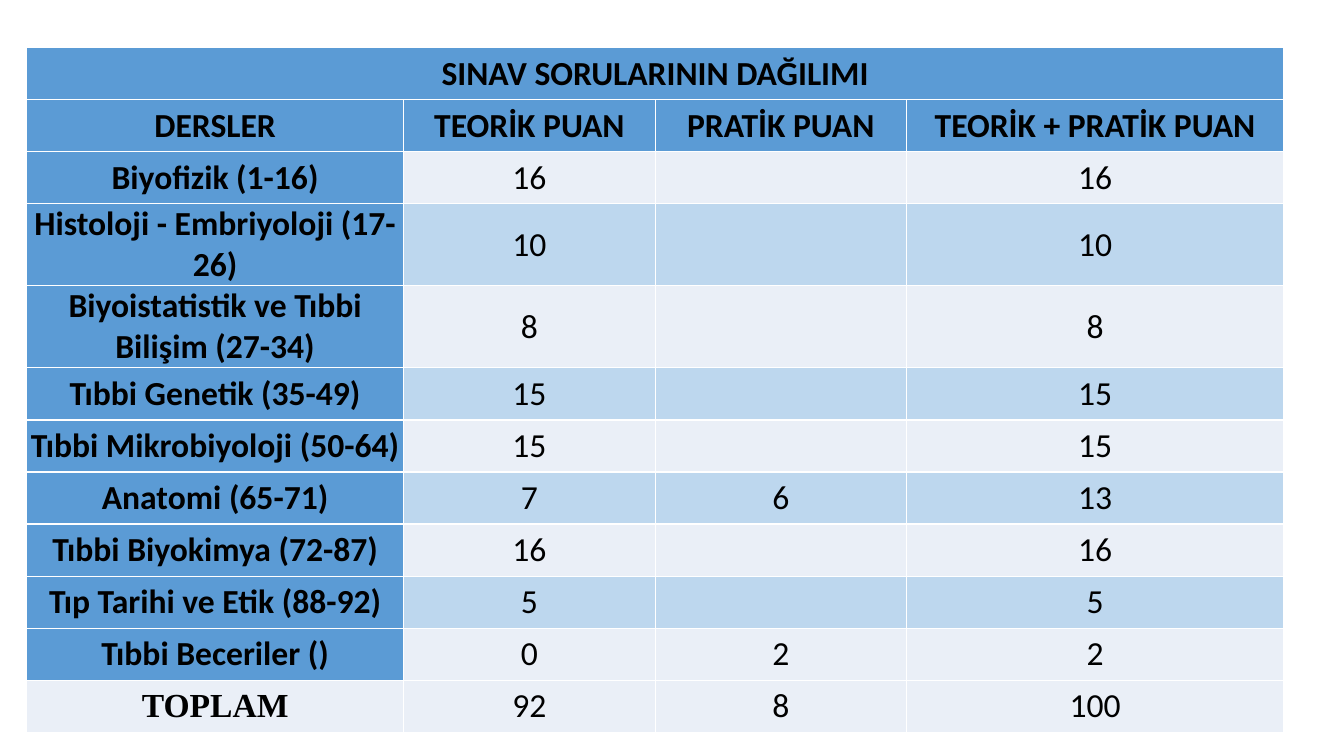
import pptx
import pptx.dml.color
import pptx.enum.text
import pptx.oxml
import pptx.oxml.ns
import pptx.util

Pt = pptx.util.Pt

HEADER_FILL = "5B9BD5"
LIGHT_FILL = "EAEFF7"
BAND_FILL = "BDD7EE"
BORDER = "FFFFFF"
TEXT = "000000"

TITLE = "SINAV SORULARININ DAĞILIMI"
HEADINGS = ["DERSLER", "TEORİK PUAN", "PRATİK PUAN", "TEORİK + PRATİK PUAN"]
COURSES = [
    ["Biyofizik (1-16)", "16", "", "16"],
    ["Histoloji - Embriyoloji (17-26)", "10", "", "10"],
    ["Biyoistatistik ve Tıbbi Bilişim (27-34)", "8", "", "8"],
    ["Tıbbi Genetik (35-49)", "15", "", "15"],
    ["Tıbbi Mikrobiyoloji (50-64)", "15", "", "15"],
    ["Anatomi (65-71)", "7", "6", "13"],
    ["Tıbbi Biyokimya (72-87)", "16", "", "16"],
    ["Tıp Tarihi ve Etik (88-92)", "5", "", "5"],
    ["Tıbbi Beceriler ()", "0", "2", "2"],
]
TOTALS = ["TOPLAM", "92", "8", "100"]
COLUMN_SHARES = [0.3, 0.2, 0.2, 0.3]
ROW_HEIGHT = 37.2
TALL_ROW_HEIGHT = 54
TALL_ROWS = (3, 4)


def color(hex_string):
    """Return the colour for a hex string."""
    return pptx.dml.color.RGBColor.from_string(hex_string)


def add_borders(cell):
    """Give a cell thin borders on all four sides."""
    properties = cell._tc.get_or_add_tcPr()
    for side in ("lnL", "lnR", "lnT", "lnB"):
        properties.append(pptx.oxml.parse_xml(
            f'<a:{side} {pptx.oxml.ns.nsdecls("a")} w="{Pt(1)}"><a:solidFill>'
            f'<a:srgbClr val="{BORDER}"/></a:solidFill></a:{side}>'))


def format_cell(cell, text, fill, bold, font_name):
    """Fill one table cell and write its centred text."""
    add_borders(cell)
    cell.fill.solid()
    cell.fill.fore_color.rgb = color(fill)
    cell.margin_left = cell.margin_right = Pt(0)
    cell.margin_top = cell.margin_bottom = Pt(0)
    cell.vertical_anchor = pptx.enum.text.MSO_ANCHOR.MIDDLE
    if text:
        paragraph = cell.text_frame.paragraphs[0]
        paragraph.alignment = pptx.enum.text.PP_ALIGN.CENTER
        run = paragraph.add_run()
        run.text = text
        run.font.name = font_name
        run.font.size = Pt(24)
        run.font.bold = bold
        run.font.color.rgb = color(TEXT)


def add_score_table(slide, left, top, width):
    """Add the table of exam scores per course."""
    rows = [[TITLE, "", "", ""], HEADINGS, *COURSES, TOTALS]
    heights = [TALL_ROW_HEIGHT if index in TALL_ROWS else ROW_HEIGHT
               for index in range(len(rows))]
    table = slide.shapes.add_table(
        len(rows), len(HEADINGS), Pt(left), Pt(top), Pt(width), Pt(sum(heights))).table
    for column, share in zip(table.columns, COLUMN_SHARES):
        column.width = Pt(width * share)
    for row, height in zip(table.rows, heights):
        row.height = Pt(height)
    total_row = len(rows) - 1
    for row_index, texts in enumerate(rows):
        for column_index, text in enumerate(texts):
            is_total = row_index == total_row
            is_label = row_index < 2 or column_index == 0
            if is_label and not is_total:
                fill = HEADER_FILL
            elif is_total or row_index % 2 == 0:
                fill = LIGHT_FILL
            else:
                fill = BAND_FILL
            font_name = "Times New Roman" if is_total and is_label else "Calibri"
            format_cell(table.cell(row_index, column_index), text, fill, is_label, font_name)
    table.cell(0, 0).merge(table.cell(0, len(HEADINGS) - 1))


def main():
    """Build and save the presentation."""
    presentation = pptx.Presentation()
    presentation.slide_width = Pt(960)
    presentation.slide_height = Pt(540)
    slide = presentation.slides.add_slide(presentation.slide_layouts[6])
    add_score_table(slide, 19, 34, 898)
    presentation.save("out.pptx")


if __name__ == "__main__":
    main()
